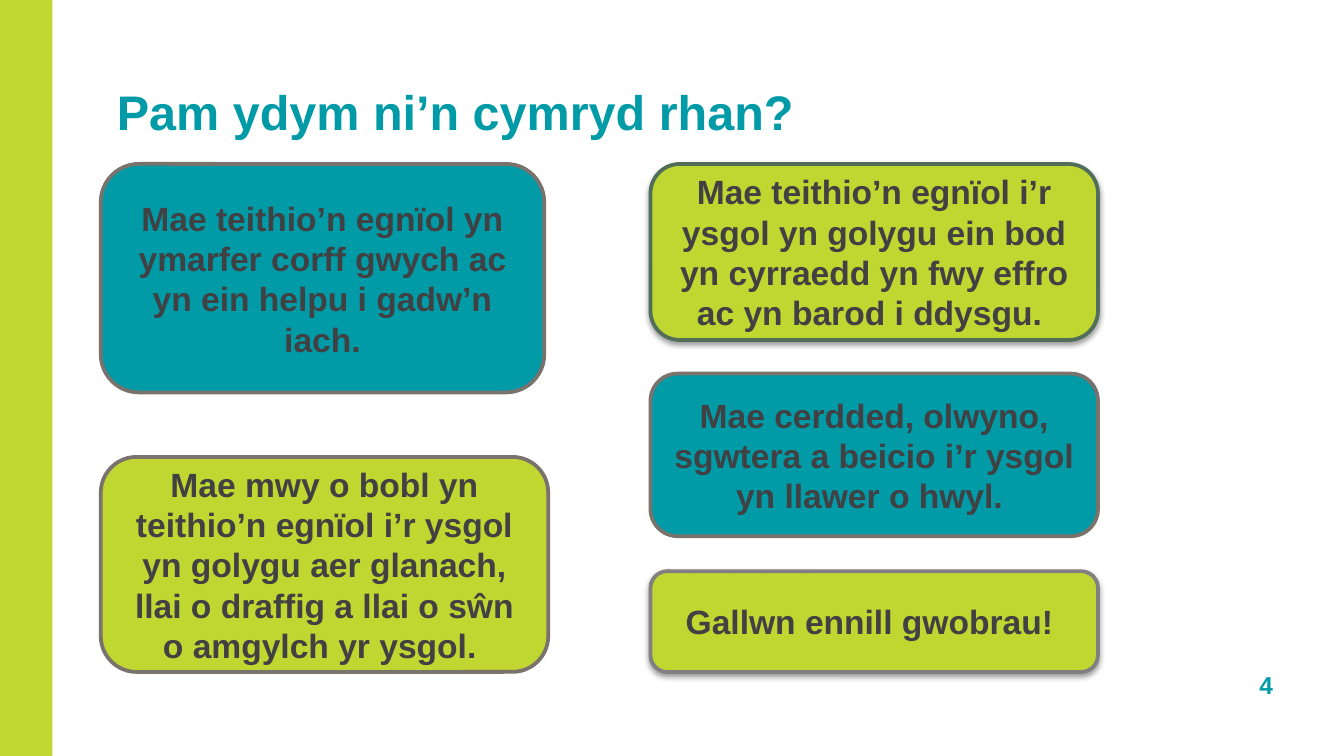
from lxml.etree import SubElement
from pptx import Presentation
from pptx.dml.color import RGBColor
from pptx.enum.shapes import MSO_SHAPE
from pptx.enum.text import MSO_ANCHOR, PP_ALIGN
from pptx.oxml.ns import qn
from pptx.util import Inches, Pt

TEAL, LIME, DARK, GREY = "009BA7", "C0D631", "414042", "79726D"
SLIDE_WIDTH = 10
SLIDE_HEIGHT = SLIDE_WIDTH * 9 / 16
LEFT_COLUMN, RIGHT_COLUMN = 0.75, 4.84
TOP_ROW = 1.22
CARD_WIDTH = 3.33

TITLE = "Pam ydym ni’n cymryd rhan?"
PAGE_NUMBER = "4"

# text, left, top, width, height, fill, outline, shadow
CARDS = [
    ("Mae cerdded, olwyno, sgwtera a beicio i’r ysgol yn llawer o hwyl. ",
     RIGHT_COLUMN, 2.78, CARD_WIDTH, 1.21, TEAL, GREY, False),
    ("Mae mwy o bobl yn teithio’n egnïol i’r ysgol yn golygu aer glanach, "
     "llai o draffig a llai o sŵn o amgylch yr ysgol. ",
     LEFT_COLUMN, 3.4, CARD_WIDTH, 1.6, LIME, GREY, False),
    ("Mae teithio’n egnïol yn ymarfer corff gwych ac yn ein helpu i gadw’n iach.",
     LEFT_COLUMN, TOP_ROW, 3.3, 1.7, TEAL, GREY, False),
    ("Mae teithio’n egnïol i’r ysgol yn golygu ein bod yn cyrraedd yn fwy effro "
     "ac yn barod i ddysgu. ",
     RIGHT_COLUMN, TOP_ROW, CARD_WIDTH, 1.31, LIME, "506E5A", True),
    ("Gallwn ennill gwobrau! ",
     RIGHT_COLUMN, 4.25, CARD_WIDTH, 0.75, LIME, "808080", True),
]


def color(value):
    return RGBColor.from_string(value)


def write(shape, text, size, text_color, align, anchor):
    frame = shape.text_frame
    frame.word_wrap = True
    frame.vertical_anchor = anchor
    paragraph = frame.paragraphs[0]
    paragraph.text = text
    paragraph.alignment = align
    font_format = {"name": "Arial", "size": Pt(size), "bold": True}
    for name, value in font_format.items():
        setattr(paragraph.font, name, value)
    paragraph.font.color.rgb = color(text_color)


def add_shape(kind, box, fill, outline=None):
    shape = slide.shapes.add_shape(kind, *map(Inches, box))
    shape.shadow.inherit = False
    shape.fill.solid()
    shape.fill.fore_color.rgb = color(fill)
    if outline:
        shape.line.color.rgb = color(outline)
        shape.line.width = Pt(2)
    else:
        shape.line.fill.background()
    return shape


def add_text(text, box, size, align, margin=None):
    shape = slide.shapes.add_textbox(*map(Inches, box))
    if margin is not None:
        for side in ("left", "top", "right", "bottom"):
            setattr(shape.text_frame, f"margin_{side}", Inches(margin))
    write(shape, text, size, TEAL, align, MSO_ANCHOR.BOTTOM)


def add_shadow(shape):
    effects = shape._element.spPr.find(qn("a:effectLst"))
    shadow = SubElement(effects, qn("a:outerShdw"), blurRad=str(Pt(3.1)),
                        dist=str(Pt(1.6)), dir="5400000", rotWithShape="0")
    shade = SubElement(shadow, qn("a:srgbClr"), val="000000")
    SubElement(shade, qn("a:alpha"), val="38000")


presentation = Presentation()
presentation.slide_width = Inches(SLIDE_WIDTH)
presentation.slide_height = Inches(SLIDE_HEIGHT)
slide = presentation.slides.add_slide(presentation.slide_layouts[6])

# Side band, page number and title
add_shape(MSO_SHAPE.RECTANGLE, (0, 0, 0.39, SLIDE_HEIGHT), LIME)
add_text(PAGE_NUMBER, (8.78, 4.93, 0.79, 0.32), 13.1, PP_ALIGN.RIGHT)
add_text(TITLE, (0.87, 0.61, 6.14, 0.43), 26, PP_ALIGN.LEFT, margin=0)

# Reason cards
for text, left, top, width, height, fill, outline, has_shadow in CARDS:
    card = add_shape(MSO_SHAPE.ROUNDED_RECTANGLE, (left, top, width, height), fill, outline)
    write(card, text, 18, DARK, PP_ALIGN.CENTER, MSO_ANCHOR.MIDDLE)
    if has_shadow:
        add_shadow(card)

presentation.save("out.pptx")
